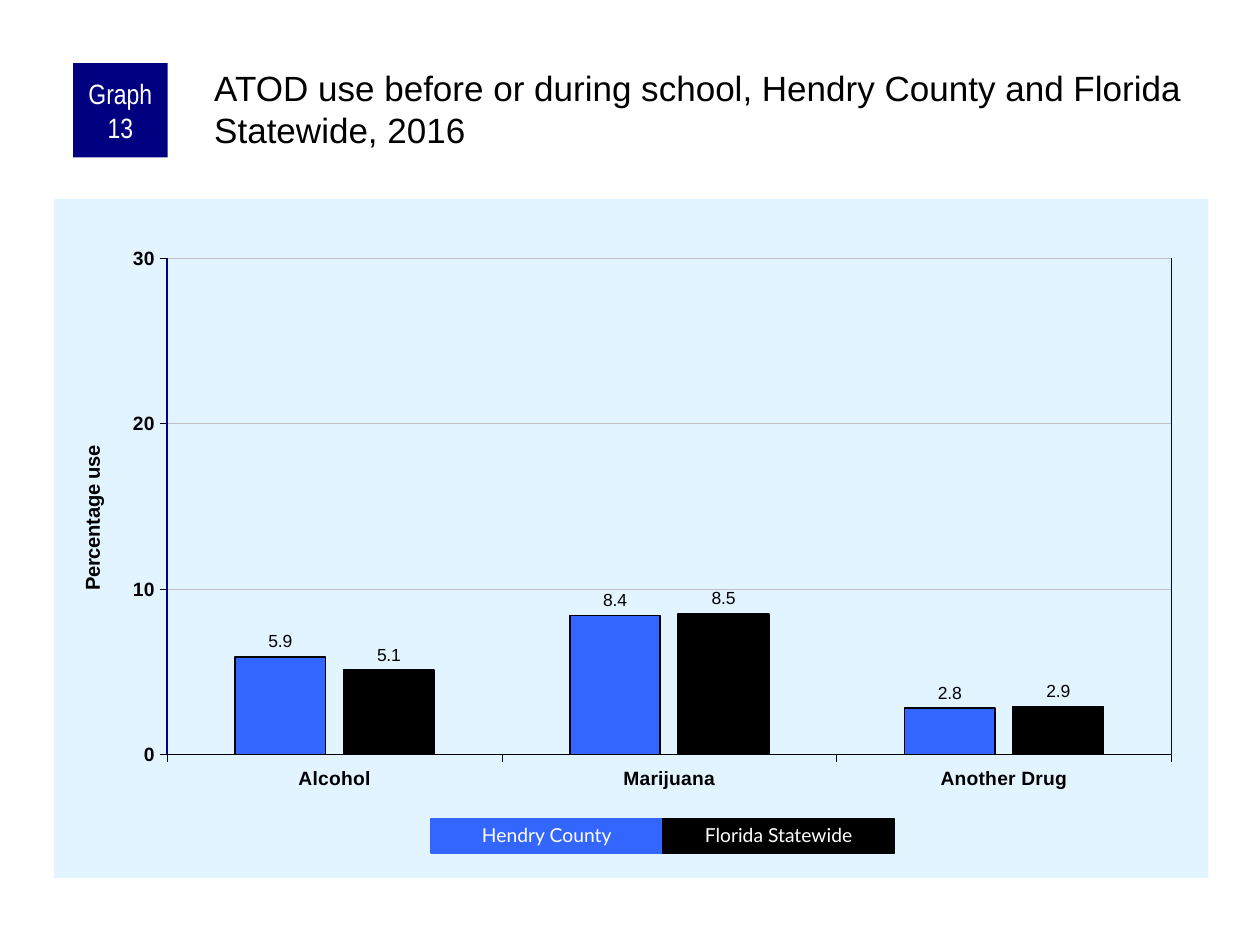
from lxml import etree
from pptx import Presentation
from pptx.chart.data import CategoryChartData
from pptx.dml.color import RGBColor
from pptx.enum import chart as charts, shapes, text
from pptx.oxml import ns
from pptx.util import Inches, Pt

NAVY, BLUE, BLACK, WHITE = "000080", "3366FF", "000000", "FFFFFF"
PALE, GREY = "E1F4FF", "C0C0C0"
CHART = (0.43, 1.58, 9.16, 5.39)
PLOT = (0.098, 0.087, 0.87, 0.731)
CATEGORIES = ["Alcohol", "Marijuana", "Another Drug"]
SERIES = [
    ("Hendry County", (5.9, 8.4, 2.8), BLUE),
    ("Florida Statewide", (5.1, 8.5, 2.9), BLACK),
]


def color(value):
    """Turn a hex string into a colour."""
    return RGBColor.from_string(value)


def apply(target, **values):
    """Set each attribute of the target."""
    for name, value in values.items():
        setattr(target, name, value)


def style_font(font, size, hue=BLACK, name="Arial", bold=False):
    """Set the size, colour, face and weight of a font."""
    apply(font, size=Pt(size), name=name, bold=bold)
    font.color.rgb = color(hue)


def style_line(line, hue, width):
    """Set the colour and width of a line."""
    line.color.rgb = color(hue)
    line.width = Pt(width)


def style_fill(fill, hue):
    """Give a solid fill."""
    fill.solid()
    fill.fore_color.rgb = color(hue)


def add_title(page, words):
    """Place the slide title."""
    title = page.shapes.title
    apply(title, left=Inches(1.67), top=Inches(0.5), width=Inches(7.92), height=Inches(0.83))
    frame = title.text_frame
    frame.text = words
    apply(
        frame,
        margin_left=Inches(0.03),
        margin_top=Inches(0.03),
        margin_right=0,
        margin_bottom=0,
        word_wrap=True,
        auto_size=text.MSO_AUTO_SIZE.NONE,
        vertical_anchor=text.MSO_ANCHOR.TOP,
    )
    para = frame.paragraphs[0]
    para.alignment = text.PP_ALIGN.LEFT
    style_font(para.runs[0].font, 20)


def add_box(page, place, words, hue, size, face, **settings):
    """Add a filled rectangle with centred white text."""
    box = page.shapes.add_shape(shapes.MSO_SHAPE.RECTANGLE, *map(Inches, place))
    box.shadow.inherit = False
    style_fill(box.fill, hue)
    box.line.fill.background()
    frame = box.text_frame
    frame.text = words
    apply(frame, word_wrap=True, vertical_anchor=text.MSO_ANCHOR.MIDDLE, **settings)
    para = frame.paragraphs[0]
    para.alignment = text.PP_ALIGN.CENTER
    style_font(para.runs[0].font, size, WHITE, face)
    return box


def add_legend(page):
    """Add one adjoining key box for each series."""
    width = 1.84
    for index, (name, _, hue) in enumerate(SERIES):
        place = (3.42 + index * width, 6.5, width, 0.27)
        box = add_box(page, place, name, hue, 11, "Lato",
                      auto_size=text.MSO_AUTO_SIZE.SHAPE_TO_FIT_TEXT)
        box.text_frame.paragraphs[0].line_spacing = 0.9
        style_line(box.line, hue, 0.75)


def style_axis(axis):
    """Format what both axes share."""
    apply(axis, major_tick_mark=charts.XL_TICK_MARK.OUTSIDE,
          minor_tick_mark=charts.XL_TICK_MARK.NONE)
    style_font(axis.tick_labels.font, 11, bold=True)
    style_line(axis.format.line, BLACK, 0.25)


def style_value_axis(axis):
    """Set the scale, gridlines and title of the value axis."""
    apply(axis, minimum_scale=0, maximum_scale=30, major_unit=10, has_major_gridlines=True)
    apply(axis.tick_labels, number_format="0", number_format_is_linked=False)
    style_line(axis.major_gridlines.format.line, GREY, 0.25)
    frame = axis.axis_title.text_frame
    frame.text = "Percentage use"
    style_font(frame.paragraphs[0].runs[0].font, 11.5, bold=True)


def style_series(series, hue):
    """Colour a series and label its bars."""
    series.invert_if_negative = False
    style_fill(series.format.fill, hue)
    style_line(series.format.line, BLACK, 1)
    labels = series.data_labels
    apply(labels, show_value=True, number_format="0.0", number_format_is_linked=False,
          position=charts.XL_LABEL_POSITION.OUTSIDE_END)
    style_font(labels.font, 10)


def set_backdrop(chart):
    """Fill the chart area and fix the inner plot area."""
    area = etree.Element(ns.qn("c:spPr"))
    fill = etree.SubElement(area, ns.qn("a:solidFill"))
    etree.SubElement(fill, ns.qn("a:srgbClr"), val=PALE)
    line = etree.SubElement(area, ns.qn("a:ln"))
    etree.SubElement(line, ns.qn("a:noFill"))
    root = chart.element
    root.find(ns.qn("c:chart")).addnext(area)
    plot_area = root.find(".//" + ns.qn("c:plotArea"))
    for old in plot_area.findall(ns.qn("c:layout")):
        plot_area.remove(old)
    layout = etree.Element(ns.qn("c:layout"))
    manual = etree.SubElement(layout, ns.qn("c:manualLayout"))
    values = {"layoutTarget": "inner", "xMode": "edge", "yMode": "edge"}
    values.update(zip("xywh", map(str, PLOT)))
    for name, value in values.items():
        etree.SubElement(manual, ns.qn("c:" + name), val=value)
    plot_area.insert(0, layout)


def add_bar_chart(page):
    """Add the clustered column chart."""
    data = CategoryChartData(number_format="0.0")
    data.categories = CATEGORIES
    for name, values, _ in SERIES:
        data.add_series(name, values)
    chart = page.shapes.add_chart(
        charts.XL_CHART_TYPE.COLUMN_CLUSTERED, *map(Inches, CHART), data).chart
    apply(chart, has_legend=False, has_title=False)
    style_font(chart.font, 11.5)
    plot = chart.plots[0]
    apply(plot, gap_width=150, overlap=-20, vary_by_categories=False)
    for series, (_, _, hue) in zip(plot.series, SERIES):
        style_series(series, hue)
    for axis in (chart.category_axis, chart.value_axis):
        style_axis(axis)
    style_value_axis(chart.value_axis)
    set_backdrop(chart)


def add_plot_sides(page):
    """Draw the navy lines on both sides of the plot area."""
    left, top, width, height = CHART
    x, y, across, down = PLOT
    start, end = top + y * height, top + (y + down) * height
    for share in (x, x + across):
        side = left + share * width
        line = page.shapes.add_connector(
            shapes.MSO_CONNECTOR.STRAIGHT, *map(Inches, (side, start, side, end)))
        style_line(line.line, NAVY, 1)
        etree.SubElement(line.element.spPr, ns.qn("a:effectLst"))


def main():
    """Build and save the slide."""
    deck = Presentation()
    apply(deck, slide_width=Inches(10), slide_height=Inches(7.5))
    page = deck.slides.add_slide(deck.slide_layouts[5])
    add_bar_chart(page)
    add_plot_sides(page)
    add_box(page, (0.58, 0.5, 0.75, 0.75), "Graph 13", NAVY, 16, "Arial Narrow",
            margin_left=Inches(0.05), margin_right=Inches(0.05), margin_top=0, margin_bottom=0)
    add_title(page, "ATOD use before or during school, Hendry County and Florida Statewide, 2016")
    add_legend(page)
    deck.save("out.pptx")


if __name__ == "__main__":
    main()
